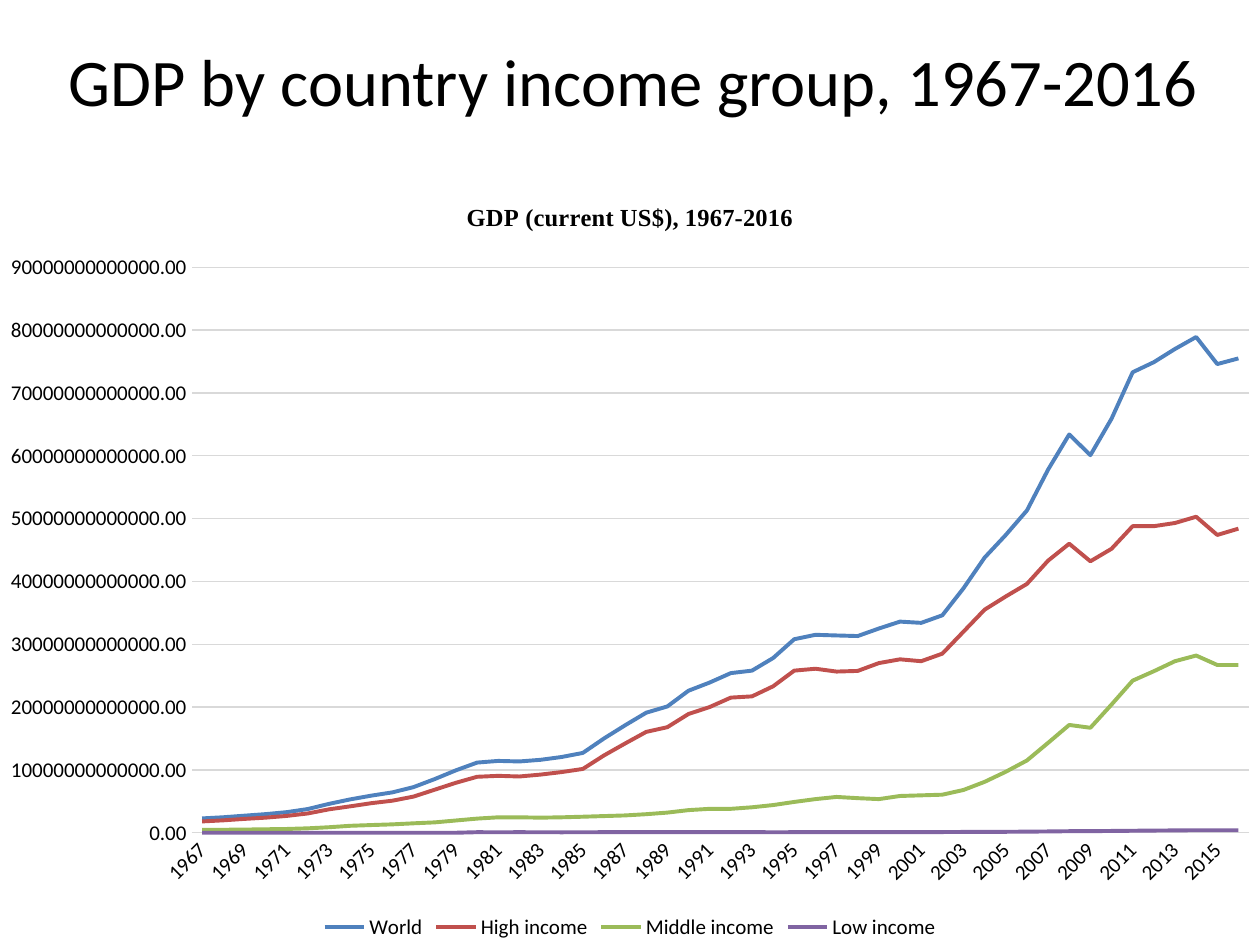
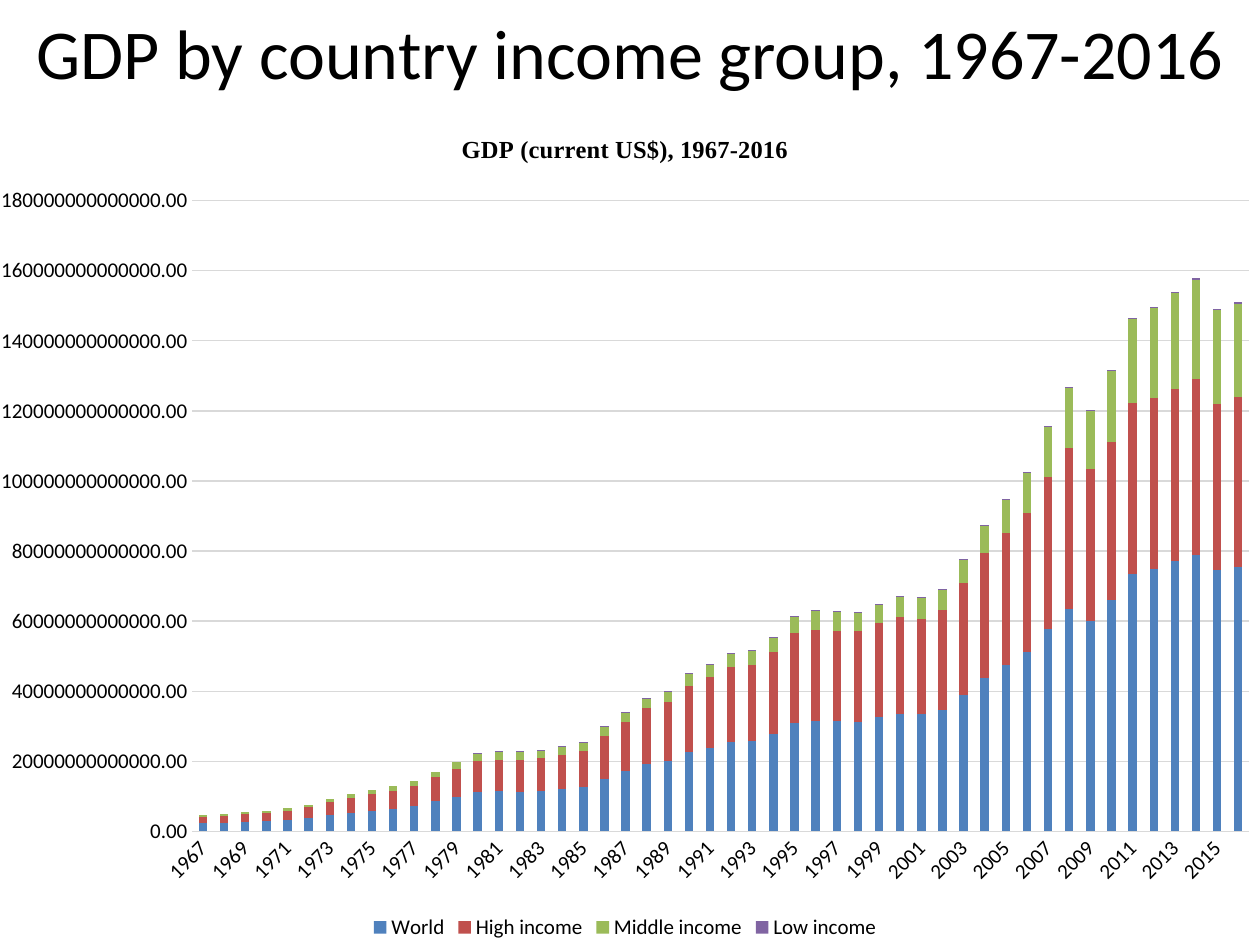
import pptx
import pptx.chart.data
import pptx.dml.color
import pptx.enum.chart
import pptx.enum.text
import pptx.util

Cm = pptx.util.Cm
Pt = pptx.util.Pt
ChartType = pptx.enum.chart.XL_CHART_TYPE

BODY_FONT = "Calibri"
BLACK = "000000"
GREY = "D9D9D9"
TITLE = "GDP by country income group, 1967-2016"
CHART_TITLE = "GDP (current US$), 1967-2016"
YEARS = range(1967, 2017)
TRILLION = 10 ** 12

# Name: (colour, GDP of each year in trillions of US$)
INCOME_GROUPS = {
    "World": ("4F81BD", [
        2.28, 2.46, 2.71, 2.96, 3.27, 3.77, 4.59, 5.3, 5.9, 6.42,
        7.26, 8.54, 9.93, 11.16, 11.43, 11.34, 11.6, 12.05, 12.7, 15.0,
        17.1, 19.1, 20.1, 22.6, 23.9, 25.4, 25.8, 27.8, 30.8, 31.5,
        31.4, 31.3, 32.5, 33.6, 33.4, 34.6, 38.9, 43.8, 47.4, 51.3,
        57.8, 63.4, 60.1, 65.9, 73.3, 74.9, 77.0, 78.9, 74.6, 75.5]),
    "High income": ("C0504D", [
        1.8, 1.97, 2.2, 2.4, 2.67, 3.07, 3.72, 4.2, 4.7, 5.1,
        5.75, 6.85, 7.95, 8.9, 9.05, 8.95, 9.25, 9.65, 10.15, 12.3,
        14.2, 16.05, 16.8, 18.9, 20.0, 21.5, 21.7, 23.3, 25.8, 26.1,
        25.65, 25.75, 27.0, 27.6, 27.3, 28.5, 32.0, 35.5, 37.6, 39.6,
        43.3, 46.0, 43.2, 45.2, 48.8, 48.8, 49.3, 50.3, 47.4, 48.4]),
    "Middle income": ("9BBB59", [
        0.45, 0.47, 0.5, 0.55, 0.6, 0.7, 0.87, 1.1, 1.22, 1.33,
        1.5, 1.65, 1.95, 2.25, 2.45, 2.45, 2.4, 2.45, 2.55, 2.65,
        2.75, 2.95, 3.2, 3.6, 3.8, 3.8, 4.05, 4.4, 4.9, 5.35,
        5.7, 5.5, 5.35, 5.85, 5.95, 6.05, 6.8, 8.1, 9.7, 11.5,
        14.3, 17.15, 16.7, 20.4, 24.2, 25.7, 27.3, 28.2, 26.7, 26.7]),
    "Low income": ("8064A2", [0] * 13 + [
        0.08, 0.077, 0.081, 0.075, 0.069, 0.072, 0.081,
        0.085, 0.091, 0.09, 0.096, 0.098, 0.087, 0.087, 0.073, 0.084, 0.094,
        0.097, 0.098, 0.098, 0.1, 0.1, 0.11, 0.12, 0.13, 0.15, 0.17,
        0.2, 0.24, 0.25, 0.28, 0.31, 0.34, 0.37, 0.4, 0.39, 0.4]),
}


def rgb(value):
    return pptx.dml.color.RGBColor.from_string(value)


def set_attributes(target, values):
    for name, value in values.items():
        setattr(target, name, value)


def format_font(font, size, name=BODY_FONT, bold=False):
    set_attributes(font, {"size": Pt(size), "name": name, "bold": bold})
    font.color.rgb = rgb(BLACK)


def format_line(line, color, width):
    line.color.rgb = rgb(color)
    line.width = Pt(width)


def place(left, top, width, height):
    """Return a position in centimetres as shape attributes."""
    return {"left": Cm(left), "top": Cm(top),
            "width": Cm(width), "height": Cm(height)}


def add_page(deck, title_place, title_size):
    """Add a slide that has only the title placeholder."""
    page = deck.slides.add_slide(deck.slide_layouts[5])
    title = page.shapes.title
    set_attributes(title, title_place)
    title.text_frame.text = TITLE
    set_attributes(title.text_frame, {
        "word_wrap": True,
        "vertical_anchor": pptx.enum.text.MSO_ANCHOR.MIDDLE,
        "auto_size": pptx.enum.text.MSO_AUTO_SIZE.NONE})
    para = title.text_frame.paragraphs[0]
    para.alignment = pptx.enum.text.PP_ALIGN.CENTER
    format_font(para.runs[0].font, title_size)
    return page


def gdp_data():
    data = pptx.chart.data.CategoryChartData(number_format="0.00")
    data.categories = [str(year) for year in YEARS]
    for name, (_, trillions) in INCOME_GROUPS.items():
        data.add_series(name, [round(value * TRILLION) for value in trillions])
    return data


def format_axes(chart, step):
    """Style both axes; the value axis has nine steps, given in trillions."""
    for axis in (chart.category_axis, chart.value_axis):
        axis.major_tick_mark = pptx.enum.chart.XL_TICK_MARK.NONE
        axis.minor_tick_mark = pptx.enum.chart.XL_TICK_MARK.NONE
        format_font(axis.tick_labels.font, 12)
    years, values = chart.category_axis, chart.value_axis
    format_line(years.format.line, GREY, 0.75)
    years._element.txPr.bodyPr.set("rot", str(-45 * 60000))
    set_attributes(values, {
        "minimum_scale": 0, "maximum_scale": 9 * step * TRILLION,
        "major_unit": step * TRILLION, "has_major_gridlines": True})
    set_attributes(values.tick_labels, {
        "number_format": "0.00", "number_format_is_linked": False})
    values.format.line.fill.background()
    format_line(values.major_gridlines.format.line, GREY, 0.75)


def add_gdp_chart(page, chart_type, chart_place, step):
    chart = page.shapes.add_chart(
        chart_type, *chart_place.values(), gdp_data()).chart
    format_font(chart.font, 10)
    set_attributes(chart, {"has_title": True, "has_legend": True})
    chart.chart_title.text_frame.text = CHART_TITLE
    title_run = chart.chart_title.text_frame.paragraphs[0].runs[0]
    format_font(title_run.font, 14, "Times New Roman", True)
    chart.chart_title.include_in_layout = False
    set_attributes(chart.legend, {
        "position": pptx.enum.chart.XL_LEGEND_POSITION.BOTTOM,
        "include_in_layout": False})
    format_font(chart.legend.font, 12)
    format_axes(chart, step)

    plot = chart.plots[0]
    plot.vary_by_categories = False
    is_line = chart_type == ChartType.LINE
    if not is_line:
        set_attributes(plot, {"overlap": 100, "gap_width": 150})
    for series, (color, _) in zip(plot.series, INCOME_GROUPS.values()):
        if is_line:
            series.smooth = False
            format_line(series.format.line, color, 2.25)
        else:
            series.format.fill.solid()
            series.format.fill.fore_color.rgb = rgb(color)


def main():
    deck = pptx.Presentation()
    set_attributes(deck, {"slide_width": Cm(25.4), "slide_height": Cm(19.05)})

    trend = add_page(deck, place(0.66, 0.46, 24.23, 2.29), 38)
    add_gdp_chart(trend, ChartType.LINE, place(-0.3, 3.53, 26, 15.52), 10)

    stacked = add_page(deck, place(0, -1.27, 25.4, 4.6), 40)
    add_gdp_chart(stacked, ChartType.COLUMN_STACKED,
                  place(-0.5, 2.13, 26.2, 16.92), 20)

    deck.save("out.pptx")


if __name__ == "__main__":
    main()
